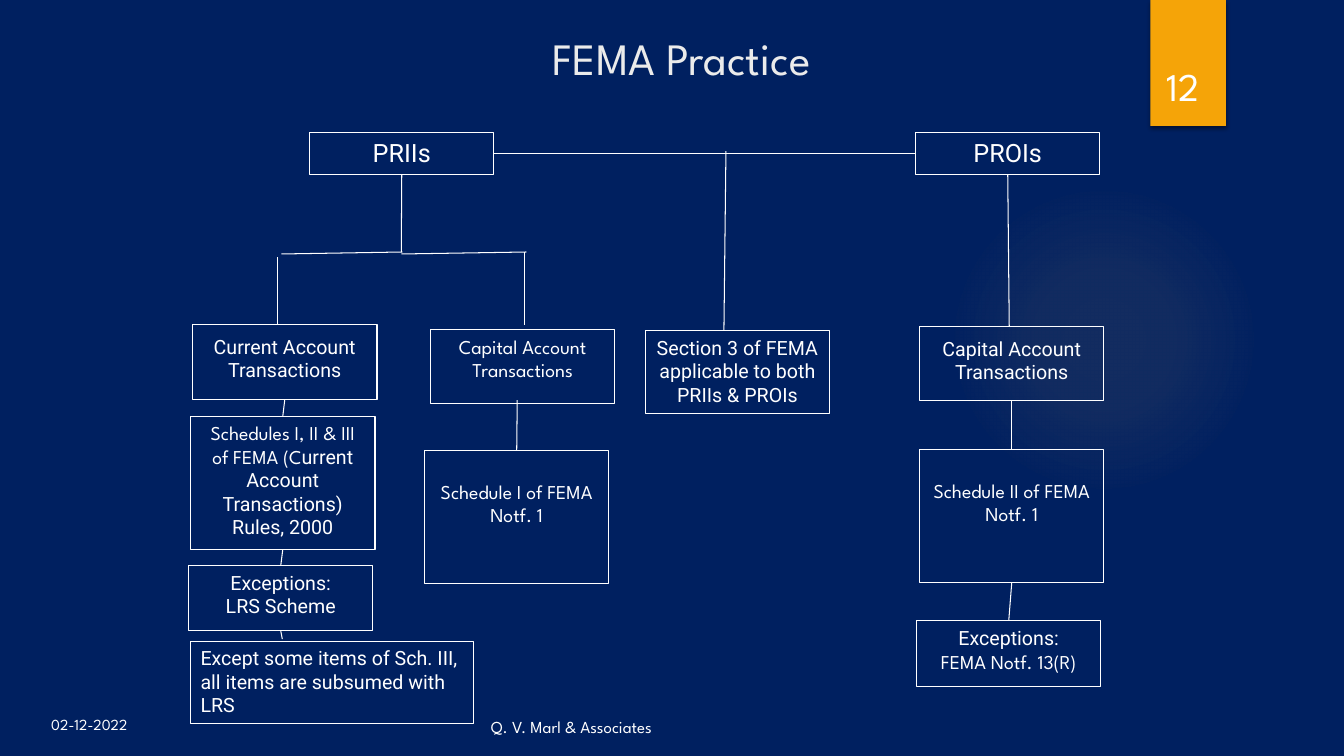
from lxml import etree
from pptx import Presentation
from pptx.dml.color import RGBColor
from pptx.enum import shapes, text
from pptx.oxml import parse_xml
from pptx.oxml.ns import qn, nsdecls
from pptx.util import Inches, Pt

SPARTAN, ROBOTO = "League Spartan", "Roboto"
WHITE = "FFFFFF"
LEFT, MID = text.PP_ALIGN.LEFT, text.PP_ALIGN.CENTER
TOP, LOW = text.MSO_ANCHOR.TOP, text.MSO_ANCHOR.BOTTOM
BOTTOM, SIDE, RIGHT = 2, 1, 3


def rgb(code):
    return RGBColor.from_string(code)


def write(shape, lines, size, align=MID, anchor=TOP, color=WHITE, inset=0.05):
    """Fill a shape with paragraphs, each a list of (words, font) runs."""
    frame = shape.text_frame
    frame.word_wrap = True
    frame.auto_size = text.MSO_AUTO_SIZE.NONE
    frame.vertical_anchor = anchor
    frame.margin_left = frame.margin_right = Inches(0.1)
    frame.margin_top, frame.margin_bottom = Inches(inset), Inches(0.05)
    for i, parts in enumerate(lines):
        para = frame.add_paragraph() if i else frame.paragraphs[0]
        para.alignment = align
        for words, face in parts:
            run = para.add_run()
            run.text = words
            run.font.name, run.font.size = face, Pt(size)
            run.font.color.rgb = rgb(color)


deck = Presentation()
deck.slide_width, deck.slide_height = Inches(13.33), Inches(7.5)
slide = deck.slides.add_slide(deck.slide_layouts[5])
slide.background.fill.solid()
slide.background.fill.fore_color.rgb = rgb("002060")
items = slide.shapes

# Soft glow and page ribbon
glow = items.add_shape(shapes.MSO_SHAPE.OVAL, Inches(9.41), Inches(1.83), Inches(3.08), Inches(3.08))
glow.shadow.inherit = False
glow.line.fill.background()
glow.fill.background()
stops = "".join(
    f'<a:gs pos="{pos}000"><a:srgbClr val="FAC96A"><a:alpha val="{alpha}000"/></a:srgbClr></a:gs>'
    for pos, alpha in ((0, 7), (36, 6), (69, 0), (100, 0)))
props = glow._element.spPr
props.replace(props.find(qn("a:noFill")), parse_xml(
    f'<a:gradFill {nsdecls("a")} rotWithShape="1"><a:gsLst>{stops}</a:gsLst><a:path path="circle">'
    '<a:fillToRect l="50000" t="50000" r="50000" b="50000"/></a:path></a:gradFill>'))

ribbon = items.add_shape(shapes.MSO_SHAPE.RECTANGLE, Inches(11.41), 0, Inches(0.75), Inches(1.25))
ribbon.shadow.inherit = False
ribbon.fill.solid()
ribbon.fill.fore_color.rgb = rgb("F5A408")
ribbon.line.fill.background()
ribbon._element.spPr.find(qn("a:effectLst")).append(parse_xml(
    f'<a:outerShdw {nsdecls("a")} blurRad="38100" dist="25400" dir="5400000" rotWithShape="0">'
    '<a:srgbClr val="000000"><a:alpha val="45000"/></a:srgbClr></a:outerShdw>'))

# Title and footer
title = items.title
title.left, title.top, title.width, title.height = Inches(2.08), Inches(0.25), Inches(9.36), Inches(0.58)
write(title, [[("FEMA Practice", SPARTAN)]], 32, color="EBEBEB")
for words, x, y, w, h, size, align, anchor in (
        ("02-12-2022", 0.41, 7.05, 1.08, 0.33, 11, LEFT, TOP),
        ("Q. V. Marl & Associates", 4.77, 7.03, 4.22, 0.33, 12, LEFT, LOW),
        ("12", 11.33, 0.69, 0.81, 0.44, 28, MID, LOW)):
    note = items.add_textbox(Inches(x), Inches(y), Inches(w), Inches(h))
    write(note, [[(words, SPARTAN)]], size, align, anchor)

# Boxes: key, left, top, width, height, size, top inset, align, paragraphs
current = [[("Current Account Transactions", ROBOTO)]]
rules = [[("Schedules I, II & III of FEMA (C", SPARTAN),
          ("urrent Account Transactions) Rules, 2000", ROBOTO)]]
plan = (
    ("resident", 3.07, 1.31, 1.83, 0.42, 18, 0.05, MID, [[("PRIIs", ROBOTO)]]),
    ("foreign", 9.08, 1.31, 1.83, 0.42, 18, 0.05, MID, [[("PROIs", ROBOTO)]]),
    ("current", 1.91, 3.22, 1.83, 0.74, 14, 0.1, MID, current),
    ("capital", 4.27, 3.27, 1.83, 0.73, 14, 0.05, MID, [[("Capital Account Transactions", SPARTAN)]]),
    ("both", 6.4, 3.28, 1.83, 0.82, 14, 0.05, MID,
     [[("Section 3 of FEMA applicable to both PRIIs & PROIs", ROBOTO)]]),
    ("abroad", 9.12, 3.24, 1.83, 0.73, 14, 0.1, MID, [[("Capital Account Transactions", ROBOTO)]]),
    ("rules", 1.89, 4.13, 1.83, 1.32, 14, 0.05, MID, rules),
    ("first", 4.21, 4.47, 1.83, 1.32, 14, 0.29, MID, [[("Schedule I of FEMA Notf. 1", SPARTAN)]]),
    ("second", 9.12, 4.46, 1.83, 1.32, 14, 0.29, MID, [[("Schedule II of FEMA Notf. 1", SPARTAN)]]),
    ("scheme", 1.87, 5.61, 1.83, 0.65, 14, 0.05, MID, [[("Exceptions:", ROBOTO)], [("LRS Scheme", ROBOTO)]]),
    ("notice", 9.09, 6.16, 1.83, 0.65, 14, 0.05, MID,
     [[("Exceptions:", ROBOTO)], [("FEMA Notf. 13(R)", SPARTAN)]]),
    ("remark", 1.89, 6.36, 2.81, 0.82, 14, 0.05, LEFT,
     [[("Except some items of Sch. III, all items are subsumed with LRS", ROBOTO)]]),
)
boxes = {}
for key, x, y, w, h, size, inset, align, lines in plan:
    box = items.add_shape(shapes.MSO_SHAPE.RECTANGLE, Inches(x), Inches(y), Inches(w), Inches(h))
    box.shadow.inherit = False
    box.fill.background()
    box.line.color.rgb = rgb(WHITE)
    box.line.width = Pt(0.75)
    write(box, lines, size, align, inset=inset)
    boxes[key] = box

# Lines: each end is a point, or a box key with the side to join
for start, end in (
        (("resident", RIGHT), ("foreign", SIDE)),
        (("resident", BOTTOM), (3.98, 2.5)),
        ((3.99, 2.5), (2.79, 2.52)),
        ((3.98, 2.52), (5.22, 2.5)),
        ((2.75, 2.55), (2.75, 3.21)),
        ((5.2, 2.5), (5.2, 3.22)),
        ((7.2, 1.5), (7.18, 3.28)),
        ((5.13, 3.97), ("first", 0)),
        (("foreign", BOTTOM), (10.01, 3.24)),
        (("abroad", BOTTOM), ("second", 0)),
        (("second", BOTTOM), ("notice", 0)),
        (("current", BOTTOM), ("rules", 0)),
        (("rules", BOTTOM), ("scheme", 0)),
        (("scheme", BOTTOM), (2.8, 6.34))):
    ends = [(0, 0) if p[0] in boxes else (Inches(p[0]), Inches(p[1])) for p in (start, end)]
    link = items.add_connector(shapes.MSO_CONNECTOR.STRAIGHT, *ends[0], *ends[1])
    for point, join in ((start, link.begin_connect), (end, link.end_connect)):
        if point[0] in boxes:
            join(boxes[point[0]], point[1])
    link.line.color.rgb = rgb(WHITE)
    link.line.width = Pt(0.75)
    etree.SubElement(link._element.spPr, qn("a:effectLst"))

deck.save("out.pptx")
